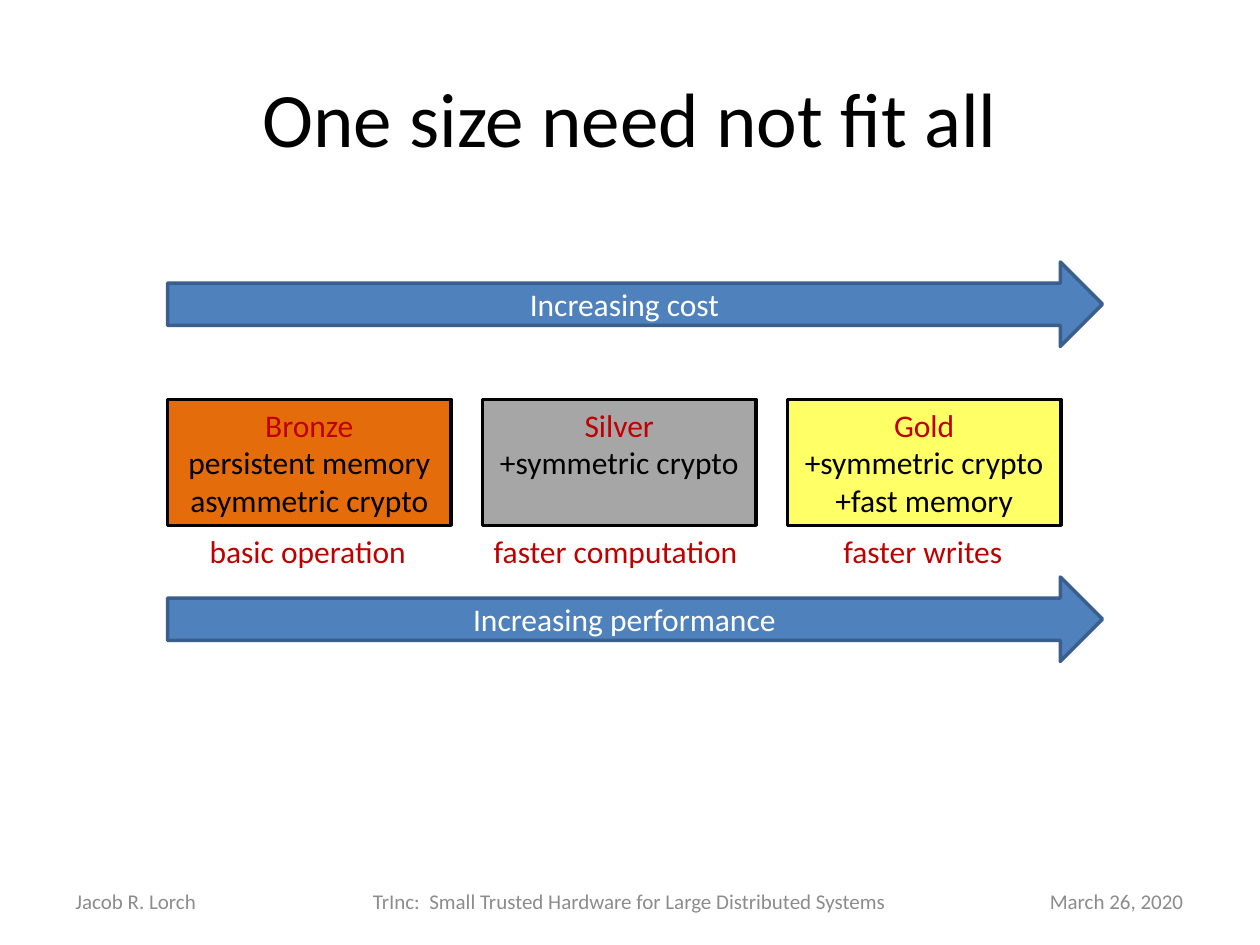
from pptx import Presentation
from pptx.dml.color import RGBColor
from pptx.enum.shapes import MSO_SHAPE
from pptx.enum.text import MSO_ANCHOR, MSO_AUTO_SIZE, PP_ALIGN
from pptx.util import Inches, Pt

# Content
TITLE = "One size need not fit all"
ARROWS = [("Increasing cost", 2.08), ("Increasing performance", 4.58)]
# name, features, fill, box width, caption, caption width
TIERS = [
    ("Bronze", ["persistent memory", "asymmetric crypto"], "E46C0A", 2.25,
     "basic operation", 1.78),
    ("Silver", ["+symmetric crypto"], "A6A6A6", 2.17,
     "faster computation", 2.19),
    ("Gold", ["+symmetric crypto", "+fast memory"], "FFFF66", 2.17,
     "faster writes", 1.48),
]
FOOTER = [
    ("Jacob R. Lorch", 2.33, PP_ALIGN.LEFT),
    ("TrInc:  Small Trusted Hardware for Large Distributed Systems", 4.33,
     PP_ALIGN.CENTER),
    ("March 26, 2020", 2.33, PP_ALIGN.RIGHT),
]
LEFT, GAP = 1.33, 0.25
BOX_TOP, BOX_TALL = 3.17, 1
RED, BLACK, WHITE, GREY = "C00000", "000000", "FFFFFF", "8C8C8C"


def color(code):
    return RGBColor.from_string(code)


def write(frame, lines, size=18, colors=(BLACK,), align=PP_ALIGN.CENTER,
          anchor=MSO_ANCHOR.MIDDLE, wrap=True):
    """Write one paragraph a line; the last color holds for the rest."""
    frame.word_wrap = wrap
    frame.vertical_anchor = anchor
    for i, line in enumerate(lines):
        para = frame.paragraphs[0] if i == 0 else frame.add_paragraph()
        para.alignment = align
        run = para.add_run()
        run.text = line
        run.font.name = "Calibri"
        run.font.size = Pt(size)
        run.font.color.rgb = color(colors[min(i, len(colors) - 1)])


def block(kind, box, fill, edge):
    shape = slide.shapes.add_shape(kind, *map(Inches, box))
    shape.shadow.inherit = False
    shape.fill.solid()
    shape.fill.fore_color.rgb = color(fill)
    shape.line.color.rgb = color(edge)
    shape.line.width = Pt(2)
    return shape.text_frame


def label(box):
    return slide.shapes.add_textbox(*map(Inches, box)).text_frame


deck = Presentation()
deck.slide_width, deck.slide_height = Inches(10), Inches(7.5)
slide = deck.slides.add_slide(deck.slide_layouts[5])

# Title
title = slide.shapes.title
title.left, title.top = Inches(0.5), Inches(0.3)
title.width, title.height = Inches(9), Inches(1.25)
write(title.text_frame, [TITLE], size=44)

# Arrows
for text, top in ARROWS:
    frame = block(MSO_SHAPE.RIGHT_ARROW, (LEFT, top, 7.42, 0.67),
                  "4F81BD", "3A5F8C")
    write(frame, [text], colors=(WHITE,))

# Tiers, each with a caption centred below
x = LEFT
for name, parts, fill, wide, note, span in TIERS:
    frame = block(MSO_SHAPE.RECTANGLE, (x, BOX_TOP, wide, BOX_TALL),
                  fill, BLACK)
    write(frame, [name] + parts, colors=(RED, BLACK), anchor=MSO_ANCHOR.TOP)
    frame = label((x + (wide - span) / 2, BOX_TOP + BOX_TALL, span, 0.4))
    write(frame, [note], colors=(RED,), align=PP_ALIGN.LEFT,
          anchor=MSO_ANCHOR.TOP, wrap=False)
    frame.auto_size = MSO_AUTO_SIZE.SHAPE_TO_FIT_TEXT
    x += wide + GAP

# Footer
x = 0.5
for text, wide, align in FOOTER:
    write(label((x, 6.95, wide, 0.4)), [text], size=12, colors=(GREY,),
          align=align)
    x += wide

deck.save("out.pptx")
